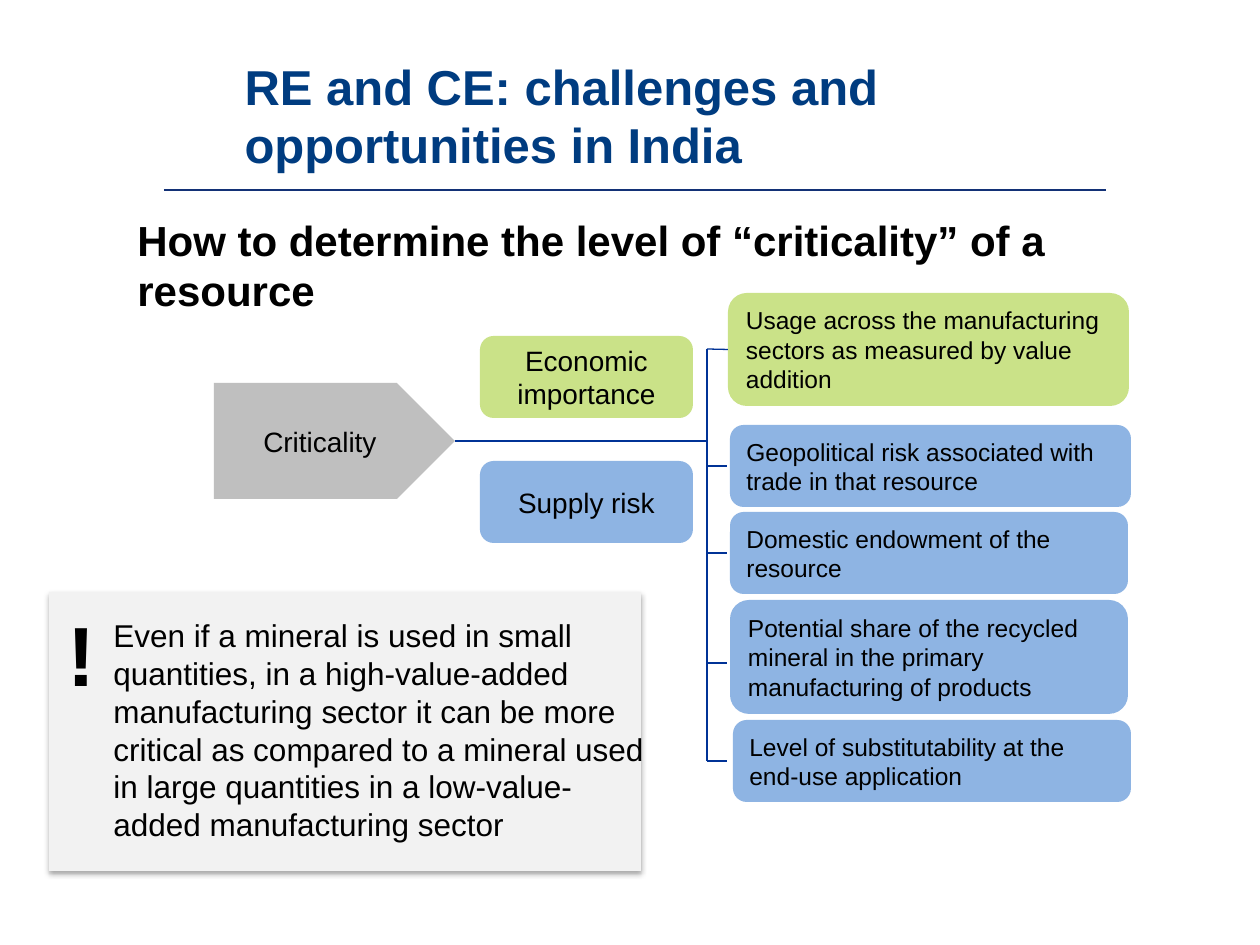
from lxml import etree
from pptx import Presentation
from pptx.dml.color import RGBColor
from pptx.enum.shapes import MSO_CONNECTOR, MSO_SHAPE
from pptx.enum.text import MSO_ANCHOR, MSO_AUTO_SIZE, PP_ALIGN
from pptx.oxml import parse_xml
from pptx.oxml.ns import nsdecls, qn
from pptx.util import Pt

STRAIGHT = MSO_CONNECTOR.STRAIGHT
ROUNDED = MSO_SHAPE.ROUNDED_RECTANGLE
PENTAGON = MSO_SHAPE.PENTAGON
RECTANGLE = MSO_SHAPE.RECTANGLE
LEFT, CENTER = PP_ALIGN.LEFT, PP_ALIGN.CENTER
MIDDLE = MSO_ANCHOR.MIDDLE
NO_AUTOFIT = MSO_AUTO_SIZE.NONE
LEFT_SIDE, RIGHT_SIDE = 1, 3
PX = 914400 / 126
GREEN, BLUE, GRAY = "CAE288", "8EB4E3", "BFBFBF"


def color(value):
    return RGBColor.from_string(value)


def emu(*lengths):
    return [round(length * PX) for length in lengths]


presentation = Presentation()
presentation.slide_width, presentation.slide_height = emu(1260, 945)
slide = presentation.slides.add_slide(presentation.slide_layouts[5])
shapes = slide.shapes

title = shapes.title
title.left, title.top, title.width, title.height = emu(232, 45, 871, 140)
title.text_frame.text = "RE and CE: challenges and opportunities in India"
title.text_frame.auto_size = NO_AUTOFIT
title.text_frame.vertical_anchor = MIDDLE
paragraph = title.text_frame.paragraphs[0]
paragraph.alignment = LEFT
paragraph.font.name = "Arial"
paragraph.font.size = Pt(28)
paragraph.font.bold = True
paragraph.font.color.rgb = color("003C80")

boxes = [
    (PENTAGON, 214, 383, 241, 116, GRAY, 16, CENTER, "Criticality"),
    (ROUNDED, 480, 336, 213, 82, GREEN, 16, CENTER, "Economic importance"),
    (ROUNDED, 480, 461, 213, 82, BLUE, 16, CENTER, "Supply risk"),
    (ROUNDED, 728, 293, 401, 113, GREEN, 14, LEFT,
     "Usage across the manufacturing sectors as measured by value addition"),
    (ROUNDED, 730, 425, 401, 82, BLUE, 14, LEFT,
     "Geopolitical risk associated with trade in that resource"),
    (ROUNDED, 730, 512, 398, 82, BLUE, 14, LEFT,
     "Domestic endowment of the resource"),
    (ROUNDED, 730, 600, 398, 114, BLUE, 14, LEFT,
     "Potential share of the recycled mineral in the primary manufacturing of products"),
    (ROUNDED, 733, 720, 398, 82, BLUE, 14, LEFT,
     "Level of substitutability at the end-use application"),
]
box_shapes = {}
for kind, left, top, width, height, fill, size, alignment, text in boxes:
    shape = shapes.add_shape(kind, *emu(left, top, width, height))
    shape.shadow.inherit = False
    shape.fill.solid()
    shape.fill.fore_color.rgb = color(fill)
    shape.line.fill.background()
    shape.text_frame.text = text
    shape.text_frame.word_wrap = True
    shape.text_frame.vertical_anchor = MIDDLE
    paragraph = shape.text_frame.paragraphs[0]
    paragraph.alignment = alignment
    paragraph.font.name = "Arial"
    paragraph.font.size = Pt(size)
    paragraph.font.color.rgb = color("000000")
    box_shapes[text] = shape

criticality = box_shapes["Criticality"]
usage = box_shapes[boxes[3][-1]]
lines = [
    (164, 190, 1106, 190, "133176", None, None),
    (455, 441, 707, 441, "003296", criticality, None),
    (707, 349, 707, 761, "003296", None, None),
    (707, 349, 728, 349, "003296", None, usage),
]
lines += [(707, y, 727, y, "003296", None, None) for y in (466, 553, 663, 761)]
for x1, y1, x2, y2, line_color, source, target in lines:
    connector = shapes.add_connector(STRAIGHT, *emu(x1, y1, x2, y2))
    connector.line.color.rgb = color(line_color)
    connector.line.width = Pt(0.75)
    etree.SubElement(connector._element.spPr, qn("a:effectLst"))
    if source:
        connector.begin_connect(source, RIGHT_SIDE)
    if target:
        connector.end_connect(target, LEFT_SIDE)

note = shapes.add_shape(RECTANGLE, *emu(49, 592, 592, 279))
note.fill.solid()
note.fill.fore_color.rgb = color("F2F2F2")
note.line.fill.background()
note._element.spPr.append(parse_xml(
    f'<a:effectLst {nsdecls("a")}>'
    f'<a:outerShdw blurRad="{Pt(3.1)}" dist="{Pt(1.8)}" dir="5400000" rotWithShape="0">'
    '<a:srgbClr val="000000"><a:alpha val="35000"/></a:srgbClr>'
    '</a:outerShdw></a:effectLst>'))

texts = [
    (125, 208, 1008, 115, 24, True,
     "How to determine the level of “criticality” of a resource"),
    (101, 610, 556, 242, 18, False,
     "Even if a mineral is used in small quantities, in a high-value-added "
     "manufacturing sector it can be more critical as compared to a mineral used "
     "in large quantities in a low-value-added manufacturing sector"),
    (55, 596, 66, 115, 48, True, "!"),
]
for left, top, width, height, size, bold, text in texts:
    text_box = shapes.add_textbox(*emu(left, top, width, height))
    text_box.text_frame.word_wrap = True
    text_box.text_frame.text = text
    paragraph = text_box.text_frame.paragraphs[0]
    paragraph.font.name = "Arial"
    paragraph.font.size = Pt(size)
    paragraph.font.bold = bold
    paragraph.font.color.rgb = color("000000")

presentation.save("out.pptx")
